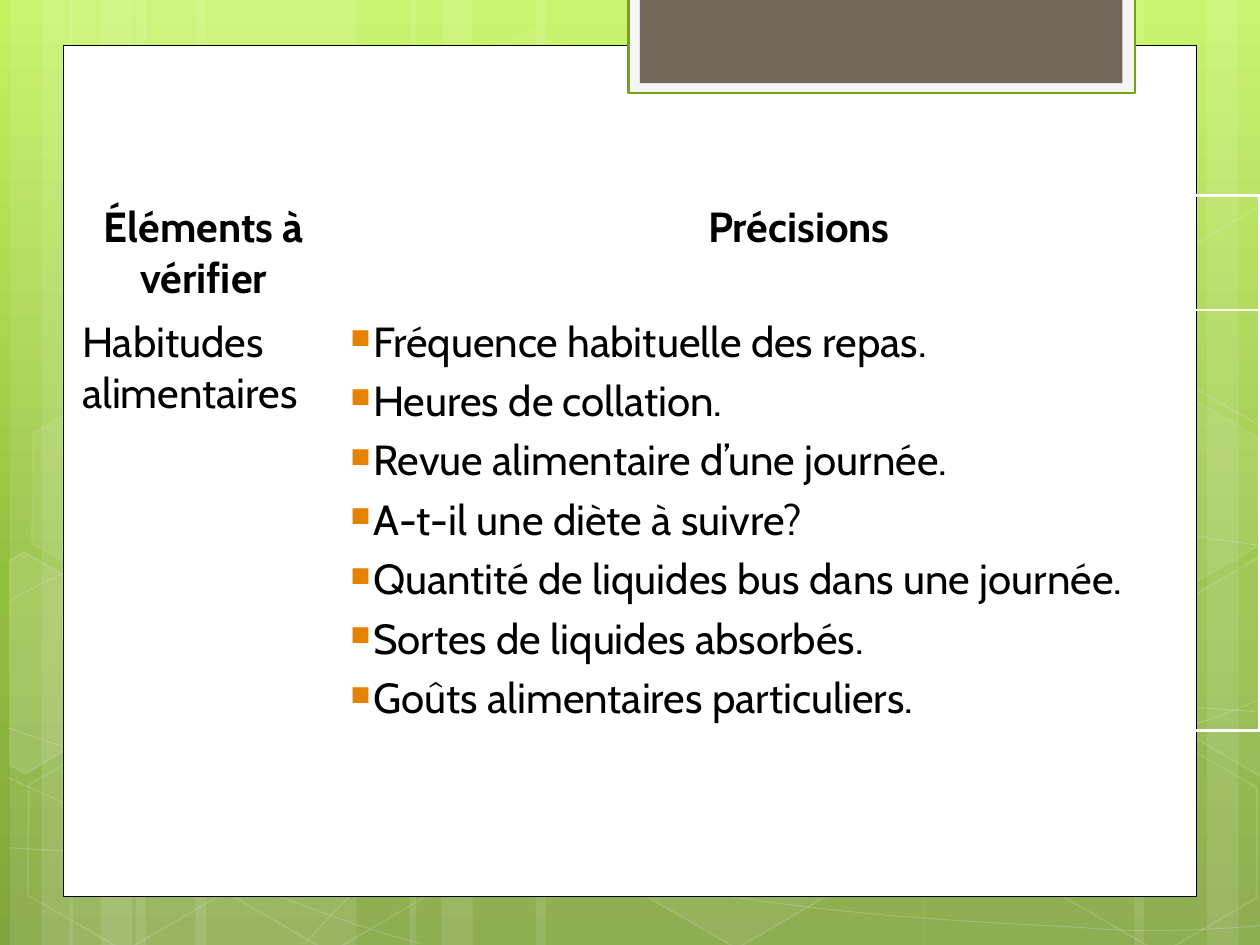
import copy

import lxml.etree
import pptx
import pptx.dml.color
import pptx.enum.shapes
import pptx.enum.text
import pptx.oxml.ns
import pptx.util

Cm, Pt = pptx.util.Cm, pptx.util.Pt
qn = pptx.oxml.ns.qn
SHAPE = pptx.enum.shapes.MSO_SHAPE
ALIGN = pptx.enum.text.PP_ALIGN

COLOURS = {
    "white": "FFFFFF", "black": "000000", "bullet": "E68200",
    "top": "C3F35F", "middle": "93BF3F", "bottom": "81A53E",
    "tab": "F5F5F5", "tab_line": "74A510", "tab_inner": "71685A",
}
PAGE = (0, 0, 25.4, 19.05)
TEXT_FORMAT = {"name": "Cabin", "size": Pt(24)}

# Waves: a start point, then three points for each curve segment (cm)
WAVES = [
    [(0.18, 17.09), (1.55, 17.17), (2.92, 17.25), (4.83, 17.22),
     (6.73, 17.2), (9.09, 17.15), (11.63, 16.89), (14.17, 16.64),
     (17.78, 16.15), (20.12, 15.67), (22.43, 15.19), (24.82, 14.43), (25.58, 14)],
    [(0.18, 12.12), (0.91, 11.71), (1.65, 11.33), (3.07, 10.95),
     (4.52, 10.57), (6.58, 10.01), (8.81, 9.83), (11.07, 9.65),
     (13.82, 9.63), (16.61, 9.83), (19.41, 10.03), (24.05, 10.82), (25.58, 11.02)],
    [(0.15, 15.67), (3.23, 17.07), (6.27, 18.47), (8.48, 19.02)],
    [(0.18, 14.68), (0.97, 14.96), (1.78, 15.24), (3.25, 15.65),
     (4.72, 16.03), (6.93, 16.66), (9.07, 17.09), (11.18, 17.53),
     (13.84, 17.98), (15.95, 18.24), (18.06, 18.52), (20.32, 18.62),
     (21.67, 18.69), (22.99, 18.8), (23.34, 18.75), (24, 18.75),
     (24.66, 18.72), (25.12, 18.69), (25.58, 18.64)],
    [(6.15, 19.02), (6.6, 18.52), (7.06, 18.01), (7.67, 17.55),
     (8.28, 17.09), (9.14, 16.59), (9.86, 16.23), (10.57, 15.88),
     (11, 15.72), (11.94, 15.47), (12.85, 15.21), (14.55, 14.86),
     (15.44, 14.68), (16.36, 14.5), (16.48, 14.5), (17.27, 14.45),
     (18.06, 14.38), (19.3, 14.3), (20.17, 14.27), (21.06, 14.25),
     (22.5, 14.27), (22.5, 14.27), (23.07, 14.27), (23.64, 14.27),
     (24.21, 14.27), (24.66, 14.3), (25.1, 14.33), (25.32, 14.35),
     (25.55, 14.38), (25.48, 14.35), (25.55, 14.38)],
]
# Hexagons: left, top, fill opacity, line opacity
HEXAGONS = [
    (8.48, 0.91, 4, 8), (12.62, 14.96, 6, 12), (0.28, 15.01, 0, 12),
    (0.36, 7.92, 7, 8), (4.42, 15.04, 0, 12), (19.13, 11.51, 10, 12),
    (21.18, 15.06, 0, 12), (21.18, 7.98, 7, 8),
]
# Hexagons cut by the slide edge: fill opacity, corners
CUT_HEXAGONS = [
    (10, [(0.2, 11.3), (0.48, 11.13), (2.44, 12.24), (2.41, 14.48),
          (0.51, 15.6), (0.2, 15.42)]),
    (4, [(23.52, 12.32), (25.43, 11.2), (25.63, 11.33), (25.63, 15.57),
         (25.45, 15.67), (23.52, 14.55)]),
    (0, [(23.52, 5.26), (25.43, 4.14), (25.65, 4.27), (25.63, 8.51),
         (25.45, 8.61), (23.52, 7.49)]),
]
HEADERS = ["Éléments à vérifier", "Précisions"]
TOPIC = "Habitudes alimentaires"
DETAILS = [
    "Fréquence habituelle des repas.",
    "Heures de collation.",
    "Revue alimentaire d’une journée.",
    "A-t-il une diète à suivre?",
    "Quantité de liquides bus dans une journée.",
    "Sortes de liquides absorbés.",
    "Goûts alimentaires particuliers.",
]


def rgb(name):
    return pptx.dml.color.RGBColor.from_string(COLOURS[name])


def set_format(target, values):
    for name, value in values.items():
        setattr(target, name, value)


def set_opacity(parent, percent):
    colour = parent.find(".//" + qn("a:srgbClr"))
    lxml.etree.SubElement(colour, qn("a:alpha"), val=str(percent * 1000))


def paint(shape, fill=None, line=None, width=1, fill_opacity=100, line_opacity=100):
    shape.shadow.inherit = False
    properties = shape.element.spPr
    if fill and fill_opacity:
        shape.fill.solid()
        shape.fill.fore_color.rgb = rgb(fill)
        if fill_opacity < 100:
            set_opacity(properties.find(qn("a:solidFill")), fill_opacity)
    else:
        shape.fill.background()
    if line:
        set_format(shape.line, {"width": Pt(width)})
        shape.line.color.rgb = rgb(line)
        if line_opacity < 100:
            set_opacity(properties.find(qn("a:ln")), line_opacity)
    else:
        shape.line.fill.background()


def add_block(slide, kind, box, **style):
    shape = slide.shapes.add_shape(kind, *map(Cm, box))
    paint(shape, **style)
    return shape


def add_outline(slide, box, points, closed, **style):
    start, *rest = [(Cm(box[0] + x), Cm(box[1] + y)) for x, y in points]
    builder = slide.shapes.build_freeform(*start)
    builder.add_line_segments(rest, close=closed)
    shape = builder.convert_to_shape()
    paint(shape, **style)
    return shape


def bend(shape):
    """Turn each three straight segments into one cubic curve."""
    path = shape.element.find(".//" + qn("a:path"))
    for index, line in enumerate(path.findall(qn("a:lnTo"))):
        if index % 3 == 0:
            curve = lxml.etree.SubElement(path, qn("a:cubicBezTo"))
        curve.append(line[0])
        path.remove(line)


def fill_background(slide):
    fill = slide.background.fill
    fill.gradient()
    fill.gradient_angle = 270
    stops = slide.element.find(".//" + qn("a:gsLst"))
    stops.append(copy.deepcopy(stops[-1]))
    levels = [("top", 0), ("middle", 0.62), ("bottom", 1)]
    for stop, (name, position) in zip(fill.gradient_stops, levels):
        stop.color.rgb = rgb(name)
        stop.position = position


def add_backdrop(slide, box):
    left, top, width, height = box
    # Stripes in groups of a wide, a narrow and a medium one
    stripes = []
    for origin, wide in [(0.2, 4.45), (1.4, 4.45), (8.26, 7.82)]:
        stripes += [(origin + 2.54, wide), (origin, 1.27), (origin + 0.64, 2.11)]
    right = width + 0.2
    stripes += [(right - offset - size, size)
                for offset, size in [(2.54, 4.45), (0, 1.27), (0.63, 2.11)]]
    for x, size in stripes:
        add_block(slide, SHAPE.RECTANGLE, (left + x, top, size, height),
                  fill="white", fill_opacity=10)
    for points in WAVES:
        bend(add_outline(slide, box, points, False,
                         line="white", width=0.5, line_opacity=20))
    for x, y, opacity, line_opacity in HEXAGONS:
        hexagon = add_block(slide, SHAPE.HEXAGON, (left + x, top + y, 4.45, 3.86),
                            fill="white", fill_opacity=opacity,
                            line="white", line_opacity=line_opacity)
        hexagon.adjustments[0] = 0.285
        hexagon.rotation = 30
    for opacity, points in CUT_HEXAGONS:
        add_outline(slide, box, points, True, fill="white", fill_opacity=opacity,
                    line="white", line_opacity=12)


def add_panel(slide, box):
    left, top, width, height = box
    add_block(slide, SHAPE.RECTANGLE, box, fill="white", line="black", width=0.5)
    # Tab hanging from the top edge of the slide
    add_block(slide, SHAPE.RECTANGLE, (left + 11.4, top - 0.96, 10.21, 1.93),
              fill="tab", line="tab_line", width=1.25)
    add_block(slide, SHAPE.RECTANGLE, (left + 11.63, top - 0.96, 9.73, 1.73),
              fill="tab_inner")


def add_bullet(paragraph):
    properties = paragraph._p.get_or_add_pPr()
    set_format_values = {"marL": Cm(0.46), "indent": -Cm(0.46)}
    for name, value in set_format_values.items():
        properties.set(name, str(value))
    colour = lxml.etree.SubElement(properties, qn("a:buClr"))
    lxml.etree.SubElement(colour, qn("a:srgbClr"), val=COLOURS["bullet"])
    lxml.etree.SubElement(properties, qn("a:buSzPct"), val="65000")
    lxml.etree.SubElement(properties, qn("a:buChar"), char="■")


def fill_cell(cell, lines, bold=False, align=ALIGN.LEFT, bullets=False):
    cell.fill.background()
    frame = cell.text_frame
    frame.text = "\n".join(lines)
    for paragraph in frame.paragraphs:
        set_format(paragraph, {"alignment": align, "space_before": Pt(4.8)})
        set_format(paragraph.runs[0].font, {**TEXT_FORMAT, "bold": bold})
        paragraph.runs[0].font.color.rgb = rgb("black")
        if bullets:
            add_bullet(paragraph)


def add_borders(cell, row, column):
    properties = cell._tc.get_or_add_tcPr()
    outer = {"lnL": column == 0, "lnR": column == 1, "lnT": row == 0, "lnB": row == 1}
    for index, (side, is_outer) in enumerate(outer.items()):
        line = lxml.etree.Element(qn("a:" + side), w=str(Pt(2.25 if is_outer else 1)))
        solid = lxml.etree.SubElement(line, qn("a:solidFill"))
        lxml.etree.SubElement(solid, qn("a:srgbClr"), val=COLOURS["white"])
        properties.insert(index, line)


def add_checklist(slide, box):
    frame = slide.shapes.add_table(2, 2, *map(Cm, box))
    table = frame.table
    set_format(table, {"first_row": False, "horz_banding": False})
    for column, width in zip(table.columns, (5.41, box[2] - 5.41)):
        column.width = Cm(width)
    for row, height in zip(table.rows, (1.47, 4.19)):
        row.height = Cm(height)
    frame.height = Cm(box[3])
    for column, header in enumerate(HEADERS):
        fill_cell(table.cell(0, column), [header], bold=True, align=ALIGN.CENTER)
    fill_cell(table.cell(1, 0), [TOPIC])
    fill_cell(table.cell(1, 1), DETAILS, bullets=True)
    for index, cell in enumerate(table.iter_cells()):
        add_borders(cell, *divmod(index, 2))


presentation = pptx.Presentation()
set_format(presentation, {"slide_width": Cm(PAGE[2]), "slide_height": Cm(PAGE[3])})
slide = presentation.slides.add_slide(presentation.slide_layouts[6])
fill_background(slide)
add_backdrop(slide, PAGE)
add_panel(slide, (1.27, 0.91, 22.86, 17.17))
add_checklist(slide, (1.4, 3.94, 24, 12.09))
presentation.save("out.pptx")
